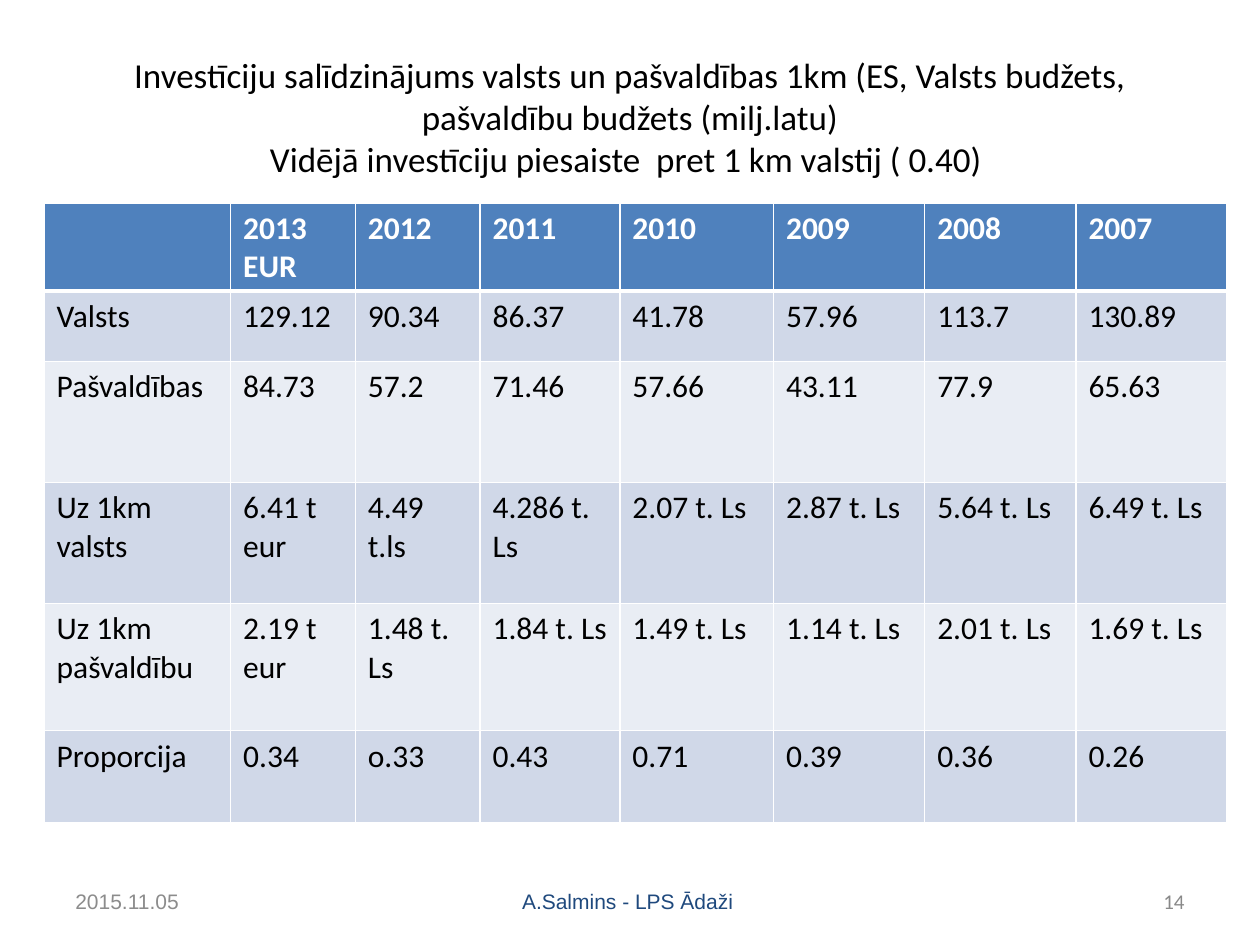
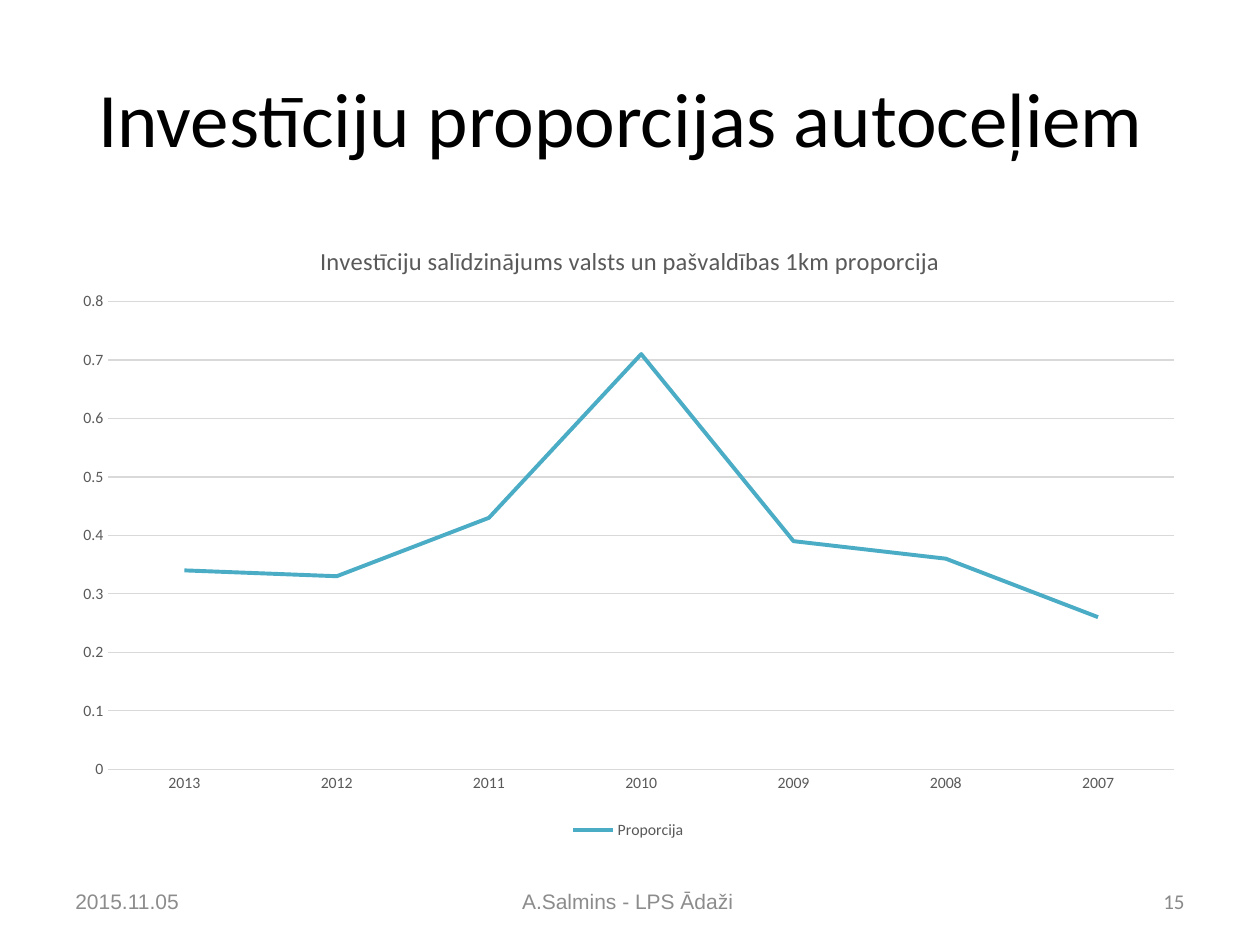
from lxml.etree import SubElement
from pptx import Presentation
from pptx.chart.data import CategoryChartData
from pptx.dml.color import RGBColor
from pptx.enum.chart import XL_CHART_TYPE, XL_LEGEND_POSITION, XL_MARKER_STYLE, XL_TICK_MARK
from pptx.enum.text import MSO_ANCHOR, MSO_AUTO_SIZE, PP_ALIGN
from pptx.oxml import parse_xml
from pptx.oxml.ns import nsdecls, qn
from pptx.util import Pt

PX = 9144
BLACK = RGBColor(0x00, 0x00, 0x00)
WHITE = RGBColor(0xFF, 0xFF, 0xFF)
HEADER_BLUE = RGBColor(0x4F, 0x81, 0xBD)
BAND_DARK = RGBColor(0xD0, 0xD8, 0xE8)
BAND_LIGHT = RGBColor(0xE9, 0xED, 0xF4)
NAVY = RGBColor(0x1F, 0x49, 0x7D)
FOOTER_GREY = RGBColor(0x8C, 0x8C, 0x8C)
NUMBER_GREY = RGBColor(0x89, 0x89, 0x89)
CHART_GREY = RGBColor(0x59, 0x59, 0x59)
GRID_GREY = RGBColor(0xD9, 0xD9, 0xD9)
TEAL = RGBColor(0x4B, 0xAC, 0xC6)

YEARS = ["2013", "2012", "2011", "2010", "2009", "2008", "2007"]
PROPORTIONS = [0.34, 0.33, 0.43, 0.71, 0.39, 0.36, 0.26]
TABLE_ROWS = [
    ["", "2013\nEUR"] + YEARS[1:],
    ["Valsts", "129.12", "90.34", "86.37", "41.78", "57.96", "113.7", "130.89"],
    ["Pašvaldības", "84.73", "57.2", "71.46", "57.66", "43.11", "77.9", "65.63"],
    ["Uz 1km valsts", "6.41 t eur", "4.49 t.ls", "4.286 t. Ls", "2.07 t. Ls",
     "2.87 t. Ls", "5.64 t. Ls", "6.49 t. Ls"],
    ["Uz 1km pašvaldību", "2.19 t\neur", "1.48 t. Ls", "1.84 t. Ls", "1.49 t. Ls",
     "1.14 t. Ls", "2.01 t. Ls", "1.69 t. Ls"],
    ["Proporcija", "0.34", "o.33", "0.43", "0.71", "0.39", "0.36", "0.26"],
]
COLUMN_WIDTHS = [148, 99, 99, 111, 122, 120, 120, 120]
ROW_HEIGHTS = [70, 56, 96, 96, 101, 73]
SLIDES = [
    (["Investīciju salīdzinājums valsts un pašvaldības 1km (ES, Valsts budžets, "
      "pašvaldību budžets (milj.latu)",
      "Vidējā investīciju piesaiste  pret 1 km valstij ( 0.40) "], 20, NAVY, "14"),
    (["Investīciju proporcijas autoceļiem "], 44, FOOTER_GREY, "15"),
]


def style_font(font, size, color, name="Calibri", bold=False):
    font.size = Pt(size)
    font.name = name
    font.bold = bold
    font.color.rgb = color


def add_cell_borders(cell, bottom_width):
    properties = cell._tc.get_or_add_tcPr()
    for position, side in enumerate(("lnL", "lnR", "lnT", "lnB")):
        width = bottom_width if side == "lnB" else 1
        properties.insert(position, parse_xml(
            f'<a:{side} {nsdecls("a")} w="{Pt(width)}"><a:solidFill>'
            f'<a:srgbClr val="{WHITE}"/></a:solidFill></a:{side}>'))


presentation = Presentation()
presentation.slide_width = 1000 * PX
presentation.slide_height = 750 * PX

for title_lines, title_size, footer_color, number in SLIDES:
    slide = presentation.slides.add_slide(presentation.slide_layouts[5])
    title = slide.shapes.title
    title.left, title.top, title.width, title.height = 50 * PX, 30 * PX, 900 * PX, 125 * PX
    title.text_frame.auto_size = MSO_AUTO_SIZE.NONE
    title.text_frame.vertical_anchor = MSO_ANCHOR.MIDDLE
    paragraph = title.text_frame.paragraphs[0]
    paragraph.alignment = PP_ALIGN.CENTER
    for index, line in enumerate(title_lines):
        if index:
            paragraph.add_line_break()
        run = paragraph.add_run()
        run.text = line
        style_font(run.font, title_size, BLACK)

    footers = [
        (50, 233, "2015.11.05", PP_ALIGN.LEFT, "Arial", FOOTER_GREY),
        (342, 317, "A.Salmins - LPS Ādaži ", PP_ALIGN.CENTER, "Arial", footer_color),
        (717, 233, number, PP_ALIGN.RIGHT, "Calibri", NUMBER_GREY),
    ]
    for left, width, text, alignment, font_name, color in footers:
        footer = slide.shapes.add_textbox(left * PX, 695 * PX, width * PX, 40 * PX)
        footer.text_frame.word_wrap = True
        footer.text_frame.vertical_anchor = MSO_ANCHOR.MIDDLE
        paragraph = footer.text_frame.paragraphs[0]
        paragraph.alignment = alignment
        run = paragraph.add_run()
        run.text = text
        style_font(run.font, 12, color, font_name)

table_slide, chart_slide = presentation.slides

table = table_slide.shapes.add_table(
    len(ROW_HEIGHTS), len(COLUMN_WIDTHS), 35 * PX, 161 * PX,
    sum(COLUMN_WIDTHS) * PX, sum(ROW_HEIGHTS) * PX).table
for column, width in zip(table.columns, COLUMN_WIDTHS):
    column.width = width * PX
for row_index, (row, height) in enumerate(zip(table.rows, ROW_HEIGHTS)):
    row.height = height * PX
    is_header = row_index == 0
    band = HEADER_BLUE if is_header else BAND_DARK if row_index % 2 else BAND_LIGHT
    for cell, text in zip(row.cells, TABLE_ROWS[row_index]):
        cell.fill.solid()
        cell.fill.fore_color.rgb = band
        add_cell_borders(cell, 3 if is_header else 1)
        for line_index, line in enumerate(text.splitlines()):
            frame = cell.text_frame
            paragraph = frame.add_paragraph() if line_index else frame.paragraphs[0]
            run = paragraph.add_run()
            run.text = line
            style_font(run.font, 18, WHITE if is_header else BLACK, bold=is_header)

chart_data = CategoryChartData()
chart_data.categories = YEARS
chart_data.add_series("Proporcija ", PROPORTIONS)
chart = chart_slide.shapes.add_chart(
    XL_CHART_TYPE.LINE, 50 * PX, 175 * PX, 900 * PX, 495 * PX, chart_data).chart
style_font(chart.font, 10, BLACK)

chart.has_title = True
run = chart.chart_title.text_frame.paragraphs[0].add_run()
run.text = "Investīciju salīdzinājums valsts un pašvaldības 1km proporcija"
style_font(run.font, 14, CHART_GREY)
chart.chart_title.include_in_layout = False

chart.has_legend = True
chart.legend.position = XL_LEGEND_POSITION.BOTTOM
chart.legend.include_in_layout = False
style_font(chart.legend.font, 9, CHART_GREY)

for axis in (chart.category_axis, chart.value_axis):
    axis.major_tick_mark = XL_TICK_MARK.NONE
    axis.minor_tick_mark = XL_TICK_MARK.NONE
    style_font(axis.tick_labels.font, 9, CHART_GREY)
chart.value_axis.format.line.fill.background()
chart.value_axis.minimum_scale = 0
chart.value_axis.maximum_scale = 0.8
chart.value_axis.major_unit = 0.1
for line in (chart.category_axis.format.line, chart.value_axis.major_gridlines.format.line):
    line.color.rgb = GRID_GREY
    line.width = Pt(0.75)

plot = chart.plots[0]
plot.vary_by_categories = False
series = plot.series[0]
series.smooth = False
series.marker.style = XL_MARKER_STYLE.NONE
series.format.line.color.rgb = TEAL
series.format.line.width = Pt(2.25)

plot_area = chart._chartSpace.chart.plotArea
layout = plot_area.find(qn("c:layout"))
if layout is None:
    layout = SubElement(plot_area, qn("c:layout"))
    plot_area.insert(0, layout)
manual_layout = SubElement(layout, qn("c:manualLayout"))
for tag, value in [("layoutTarget", "inner"), ("xMode", "edge"), ("yMode", "edge"),
                   ("x", "0.04"), ("y", "0.13"), ("w", "0.94"), ("h", "0.75")]:
    SubElement(manual_layout, qn(f"c:{tag}")).set("val", value)

presentation.save("out.pptx")
